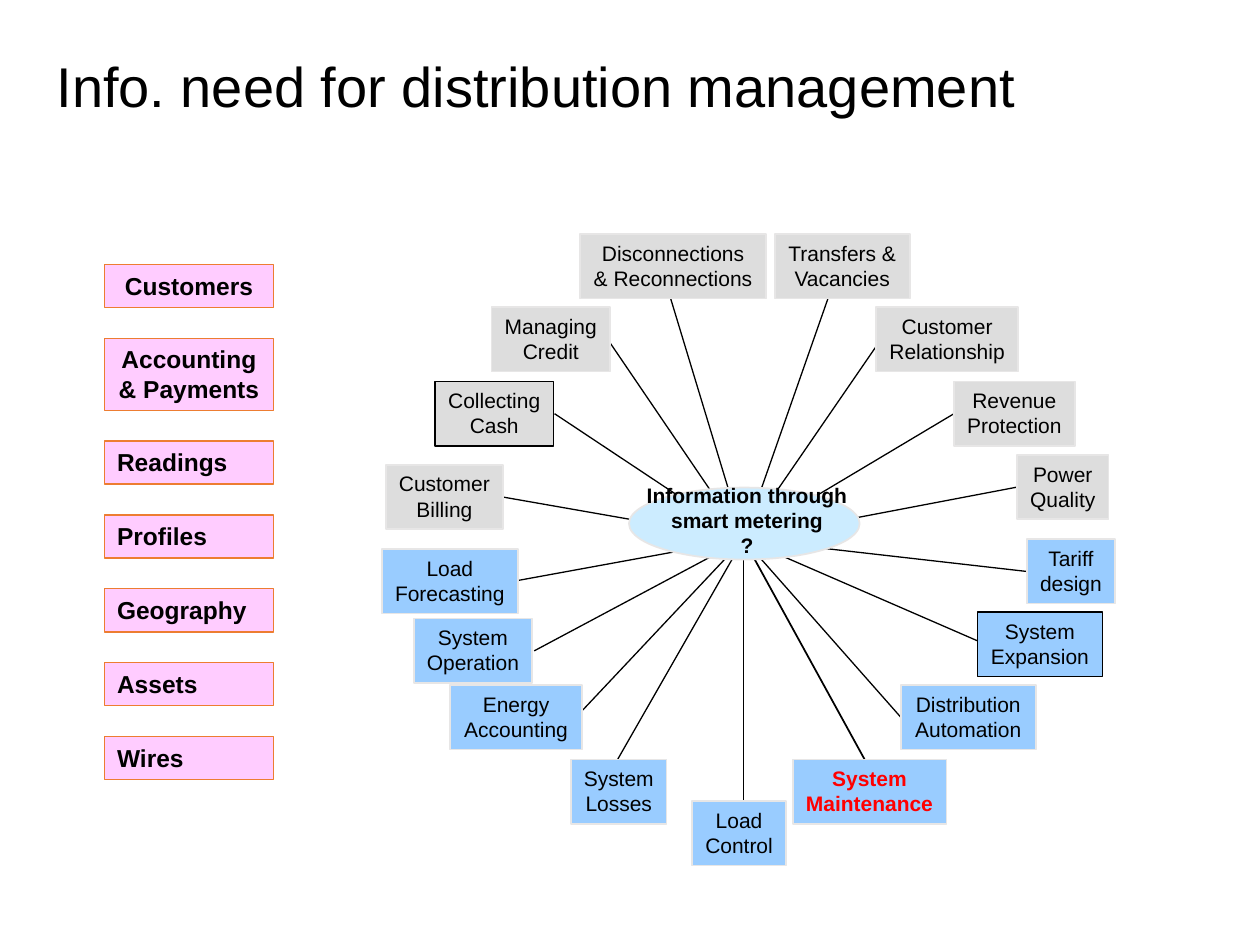
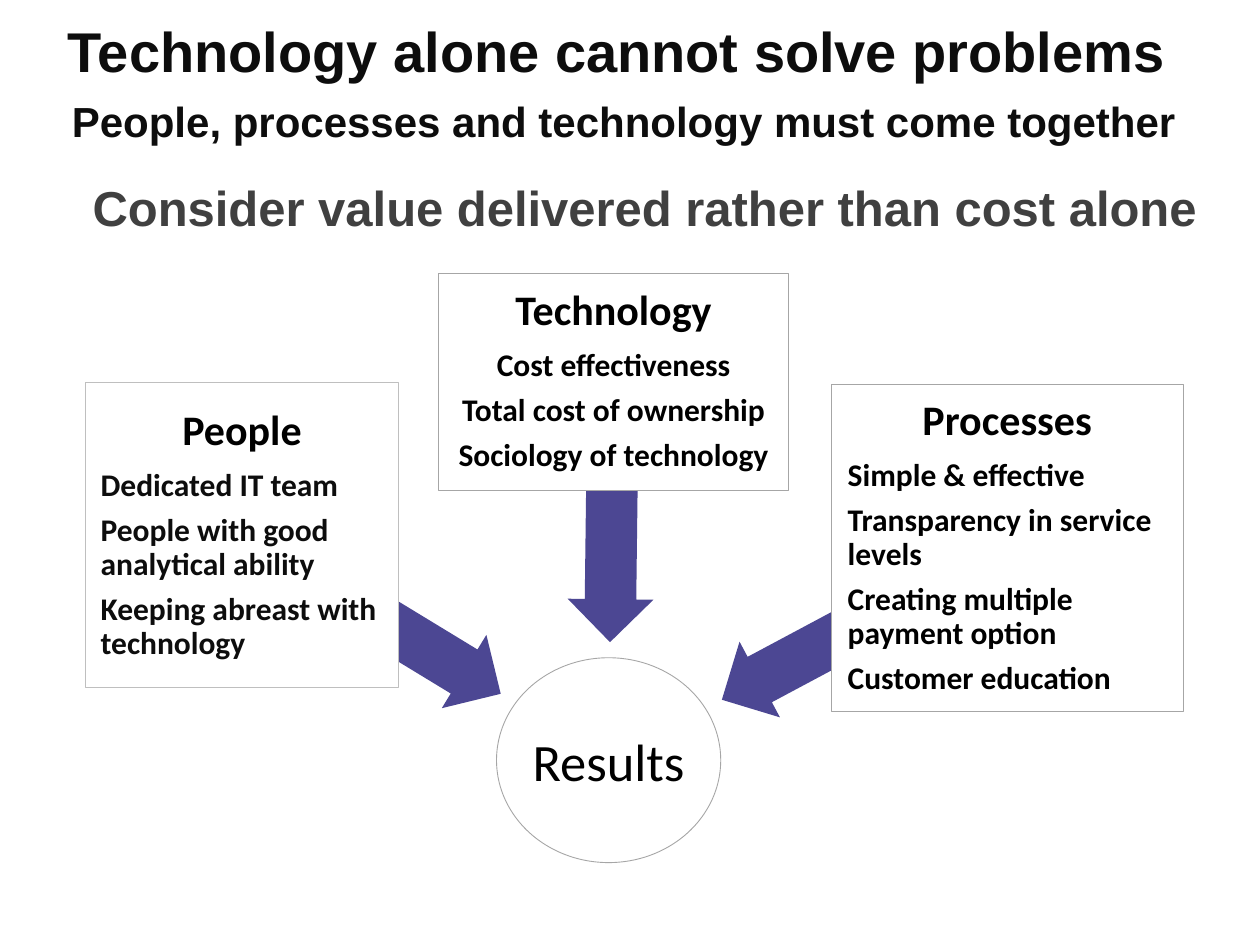
from pptx import Presentation
from pptx.dml.color import RGBColor
from pptx.enum.shapes import MSO_CONNECTOR, MSO_SHAPE
from pptx.enum.text import MSO_ANCHOR, PP_ALIGN
from pptx.oxml.ns import qn
from pptx.util import Cm, Pt
from lxml import etree

RECT, OVAL, LEFT_ARROW = MSO_SHAPE.RECTANGLE, MSO_SHAPE.OVAL, MSO_SHAPE.LEFT_ARROW
STRAIGHT = MSO_CONNECTOR.STRAIGHT
LEFT, CENTER = PP_ALIGN.LEFT, PP_ALIGN.CENTER
TOP, MIDDLE = MSO_ANCHOR.TOP, MSO_ANCHOR.MIDDLE

BLACK, INK, DARK_GREY, RED = "000000", "0D0D0D", "404040", "FF0000"
WHITE, PALE_LINE, GREY_LINE, CARD_LINE = "FFFFFF", "E7E6E6", "A6A6A6", "BFBFBF"
SERVICE_GREY, NETWORK_BLUE, HUB_BLUE = "DDDDDD", "99CCFF", "CCECFF"
PINK, ORANGE, PURPLE = "FFCCFF", "ED7D31", "4C4793"

# Text, left, top, width, x where the spoke ends (cm, within the wheel)
SERVICES = [
    ("Customer\nBilling", 0.08, 4.65, 2.36, 2.44),
    ("Collecting\nCash", 1.07, 2.97, 2.39, 3.48),
    ("Managing\nCredit", 2.21, 1.47, 2.39, 4.55),
    ("Disconnections\n& Reconnections", 3.99, 0, 3.76, 5.82),
    ("Transfers &\nVacancies", 7.92, 0, 2.72, 8.99),
    ("Customer\nRelationship", 9.96, 1.47, 2.87, 10.06),
    ("Revenue\nProtection", 11.53, 2.97, 2.44, 11.53),
    ("Power\nQuality", 12.8, 4.45, 1.85, 12.8),
]
NETWORK = [
    ("Tariff\ndesign", 13, 6.15, 1.78, 13),
    ("System\nExpansion", 12.01, 7.62, 2.51, 12.17),
    ("Distribution\nAutomation", 10.46, 9.09, 2.72, 10.46),
    ("System\nMaintenance", 8.28, 10.59, 3.1, 9.73),
    ("Load\nControl", 6.25, 11.43, 1.9, 7.29),
    ("System\nLosses", 3.81, 10.59, 1.93, 4.75),
    ("Energy\nAccounting", 1.37, 9.09, 2.67, 3.91),
    ("System\nOperation", 0.64, 7.75, 2.39, 3.07),
    ("Load\nForecasting", 0, 6.35, 2.74, 2.64),
]
OUTLINED = ("Collecting\nCash", "System\nExpansion")
HIGHLIGHT = "System\nMaintenance"
NODE_HEIGHT = 1.3
HUB_X, HUB_Y = 7.29, 6.15

DATA_SETS = ["Customers", "Accounting\n& Payments", "Readings", "Profiles",
             "Geography", "Assets", "Wires"]


def color(hex_string):
    return RGBColor.from_string(hex_string)


def write(shape, text, size, hue=BLACK, bold=False, align=CENTER, font="Arial",
          anchor=TOP, wrap=True, inset=None):
    """Put text into a shape, one paragraph per line."""
    frame = shape.text_frame
    frame.text = text
    frame.word_wrap = wrap
    frame.vertical_anchor = anchor
    if inset is not None:
        frame.margin_left = frame.margin_right = Cm(inset)
        frame.margin_top = frame.margin_bottom = Cm(inset)
    for paragraph in frame.paragraphs:
        paragraph.alignment = align
        for run in paragraph.runs:
            run.font.size, run.font.name, run.font.bold = Pt(size), font, bold
            run.font.color.rgb = color(hue)
    return frame


def add_box(slide, box, fill, line=None, weight=1.0, kind=RECT):
    shape = slide.shapes.add_shape(kind, *map(Cm, box))
    shape.shadow.inherit = False
    shape.fill.solid()
    shape.fill.fore_color.rgb = color(fill)
    if line:
        shape.line.color.rgb = color(line)
        shape.line.width = Pt(weight)
    else:
        shape.line.fill.background()
    return shape


def add_label(slide, box, text, size, **style):
    label = slide.shapes.add_textbox(*map(Cm, box))
    return write(label, text, size, **style)


def add_title(slide, box, text, **style):
    title = add_label(slide, box, text, 32, **style)
    title.paragraphs[0].line_spacing = 0.9


def add_spoke(slide, start, end, weight):
    spoke = slide.shapes.add_connector(STRAIGHT, *map(Cm, start + end))
    spoke.line.color.rgb = color(BLACK)
    spoke.line.width = Pt(weight)
    etree.SubElement(spoke._element.spPr, qn("a:effectLst"))


def add_data_stack(slide, left, top, width):
    """Pink column of data sets with equal gaps."""
    for index, name in enumerate(DATA_SETS):
        two_lines = "\n" in name
        height = 1.45 if two_lines else 0.87
        data_set = add_box(slide, (left, top, width, height), PINK, ORANGE, 0.75)
        write(data_set, name, 14, bold=True, align=CENTER if index < 2 else LEFT,
              wrap=not two_lines)
        top += height + 0.62


def add_wheel(slide, left, top):
    """Functions around a hub, each joined to it by a spoke."""
    # Spokes meet the top row from below, the bottom row from above, others mid-side
    for name, _, y, _, spoke_x in SERVICES + NETWORK:
        drop = NODE_HEIGHT if y == 0 else 0 if y > 10 else NODE_HEIGHT / 2
        add_spoke(slide, (left + HUB_X, top + HUB_Y),
                  (left + spoke_x, top + y + drop), 1 if name == HIGHLIGHT else 0.75)

    # Functions
    for functions, fill in ((SERVICES, SERVICE_GREY), (NETWORK, NETWORK_BLUE)):
        for name, x, y, width, _ in functions:
            outlined, marked = name in OUTLINED, name == HIGHLIGHT
            node = add_box(slide, (left + x, top + y, width, NODE_HEIGHT), fill,
                           BLACK if outlined else PALE_LINE, 0.75 if outlined else 1)
            write(node, name, 12, hue=RED if marked else BLACK, bold=marked, wrap=False)

    # Hub
    add_box(slide, (left + 4.98, top + 5.11, 4.65, 1.45), HUB_BLUE, PALE_LINE, kind=OVAL)
    add_label(slide, (left + 5.05, top + 4.88, 4.62, 1.8),
              "Information through smart metering\n?", 12, bold=True)


def add_card(slide, box, heading, points, line, inset, align=LEFT, hue=BLACK):
    """Framed card with a centred heading and its points."""
    card = add_box(slide, box, WHITE, line, 0.5)
    frame = write(card, "\n".join([heading] + points), 18, hue=hue, bold=True,
                  align=align, font="Calibri", anchor=MIDDLE, inset=inset)
    for paragraph in frame.paragraphs:
        paragraph.line_spacing = 0.9
        paragraph.space_after = Pt(6.3)
    title = frame.paragraphs[0]
    title.alignment = CENTER
    title.space_after = Pt(8.4)
    title.runs[0].font.size = Pt(24)
    title.runs[0].font.color.rgb = color(BLACK)


def add_results_diagram(slide, left, top):
    """Three cards whose arrows lead to the results."""
    # Arrows lie under the cards
    for x, y, length, angle in ((2.69, 6.02, 6.12, 211.3), (7.97, 3.94, 5.26, 270.7),
                                (12.44, 6.2, 6.5, 331.9)):
        arrow = add_box(slide, (left + x, top + y, length, 1.73), PURPLE, kind=LEFT_ARROW)
        arrow.adjustments[0], arrow.adjustments[1] = 0.6, 0.5
        arrow.rotation = angle

    # Cards
    add_card(slide, (left, top + 2.21, 6.3, 6.15), "People",
             ["Dedicated IT team", "People with good analytical ability",
              "Keeping abreast with technology"], CARD_LINE, 0.3, hue=INK)
    add_card(slide, (left + 7.11, top, 7.06, 4.37), "Technology",
             ["Cost effectiveness", "Total cost of ownership",
              "Sociology of technology"], GREY_LINE, 0.25, align=CENTER)
    add_card(slide, (left + 15.03, top + 2.24, 7.09, 6.6), "Processes",
             ["Simple & effective", "Transparency in service levels",
              "Creating multiple payment option", "Customer education"],
             GREY_LINE, 0.33)

    # Results
    results = add_box(slide, (left + 8.28, top + 7.75, 4.52, 4.13), WHITE,
                      GREY_LINE, 0.5, OVAL)
    write(results, "Results", 30, font="Calibri", anchor=MIDDLE, wrap=False, inset=0)


def build_information_slide(slide):
    add_title(slide, (0.89, 1.07, 23.06, 1.35),
              "Info. need for distribution management", align=LEFT)
    add_data_stack(slide, 2.11, 5.33, 3.4)
    add_wheel(slide, 7.7, 4.72)


def build_results_slide(slide):
    add_title(slide, (0.81, 0.36, 23.27, 1.75),
              "Technology alone cannot solve problems", hue=INK, bold=True)
    add_label(slide, (1.3, 1.78, 23.77, 1.32),
              "People, processes and technology must come together", 24,
              hue=INK, bold=True, align=LEFT, anchor=MIDDLE, inset=0.15)
    add_label(slide, (0.6, 3.43, 24.79, 1.47),
              "Consider value delivered rather than cost alone", 28,
              hue=DARK_GREY, bold=True, anchor=MIDDLE, inset=0.15)
    add_results_diagram(slide, 1.73, 5.51)


def main():
    deck = Presentation()
    deck.slide_width, deck.slide_height = Cm(25.4), Cm(19.05)
    blank = deck.slide_layouts[6]
    for build in (build_information_slide, build_results_slide):
        build(deck.slides.add_slide(blank))
    deck.save("out.pptx")


if __name__ == "__main__":
    main()
